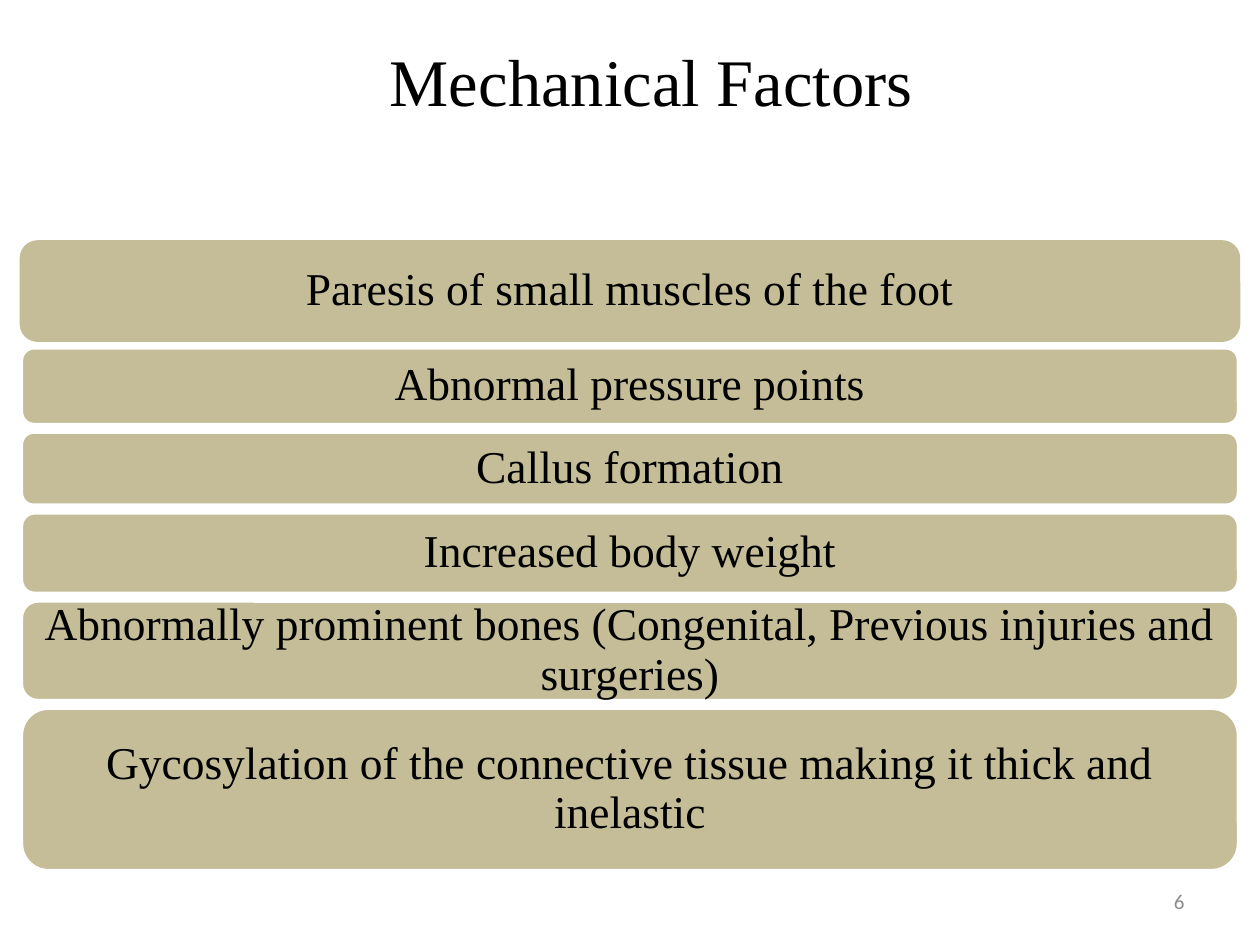
from pptx import Presentation
from pptx.dml.color import RGBColor
from pptx.enum import shapes, text
from pptx.util import Inches, Pt

BLACK = RGBColor(0x00, 0x00, 0x00)
WHITE = RGBColor(0xFF, 0xFF, 0xFF)
GREY = RGBColor(0x8C, 0x8C, 0x8C)
TAN = RGBColor(0xC4, 0xBD, 0x97)
SERIF = "Times New Roman"
GAP = 0.06
FACTORS = [
    ("Paresis of small muscles of the foot", 0.78, TAN),
    ("Abnormal pressure points", 0.61, WHITE),
    ("Callus formation", 0.58, WHITE),
    ("Increased body weight", 0.64, WHITE),
    ("Abnormally prominent bones (Congenital, Previous injuries and surgeries)", 0.79, WHITE),
    ("Gycosylation of the connective tissue making it thick and inelastic", 1.29, WHITE),
]


def write(shape, words, size, font=SERIF, color=BLACK,
          align=text.PP_ALIGN.CENTER, inset=0.1, spacing=None):
    """Fill a shape with one formatted paragraph."""
    frame = shape.text_frame
    frame.word_wrap = True
    frame.vertical_anchor = text.MSO_ANCHOR.MIDDLE
    frame.margin_left = frame.margin_right = Inches(inset)
    frame.margin_top = frame.margin_bottom = Inches(0.05)
    para = frame.paragraphs[0]
    para.alignment = align
    para.line_spacing = spacing
    run = para.add_run()
    run.text = words
    run.font.size = Pt(size)
    run.font.name = font
    run.font.color.rgb = color


def add_label(slide, box, words, size, **style):
    """Place a text box with the given format."""
    label = slide.shapes.add_textbox(*map(Inches, box))
    write(label, words, size, **style)


def add_bar(slide, box, words, edge):
    """Place one rounded bar with its text."""
    bar = slide.shapes.add_shape(
        shapes.MSO_SHAPE.ROUNDED_RECTANGLE, *map(Inches, box))
    bar.shadow.inherit = False
    bar.fill.solid()
    bar.fill.fore_color.rgb = TAN
    bar.line.color.rgb = edge
    bar.line.width = Pt(2)
    write(bar, words, 26, inset=0.11, spacing=0.9)


def add_stack(slide, box, factors):
    """Stack the bars from the top of the box with equal gaps."""
    left, top, width = box
    for words, height, edge in factors:
        add_bar(slide, (left, top, width, height), words, edge)
        top += height + GAP


def main():
    """Build and save the slide."""
    deck = Presentation()
    deck.slide_width, deck.slide_height = Inches(10), Inches(7.5)
    slide = deck.slides.add_slide(deck.slide_layouts[6])
    add_label(slide, (0.67, 0.17, 9, 0.92), "Mechanical Factors", 38)
    add_stack(slide, (0.17, 1.92, 9.66), FACTORS)
    add_label(slide, (7.17, 6.95, 2.33, 0.4), "6", 12, font="Calibri",
              color=GREY, align=text.PP_ALIGN.RIGHT)
    deck.save("out.pptx")


if __name__ == "__main__":
    main()
